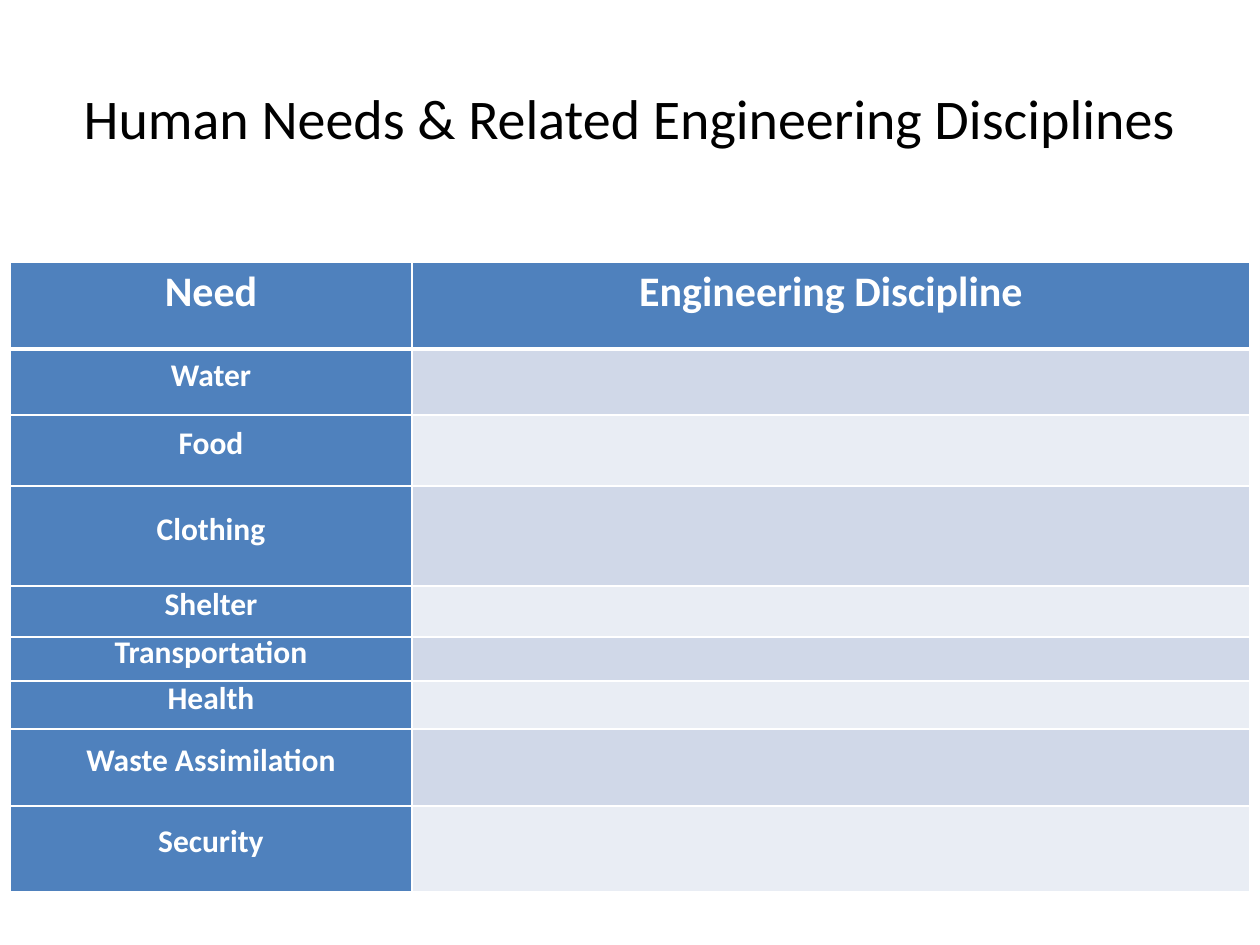
"""Build a slide with a table of human needs and engineering disciplines."""
import pptx
import pptx.dml.color
import pptx.enum.text
import pptx.oxml
import pptx.oxml.ns
import pptx.util

TITLE = "Human Needs & Related Engineering Disciplines"
HEADINGS = ("Need", "Engineering Discipline")
NEEDS = [
    ("Water", 66),
    ("Food", 71),
    ("Clothing", 100),
    ("Shelter", 51),
    ("Transportation", 44),
    ("Health", 48),
    ("Waste Assimilation", 77),
    ("Security", 86),
]
HEADING_HEIGHT = 87
COLUMN_WIDTHS = (402, 838)
TABLE_LEFT, TABLE_TOP = 10, 262
TITLE_BOX = (32, 38, 1196, 158)
COLORS = {
    "text": "000000",
    "white": "FFFFFF",
    "blue": "4F81BD",
    "odd": "D0D8E8",
    "even": "E9EDF4",
}
FONT = "Calibri"


def px(length):
    return pptx.util.Emu(round(length * 914400 / 126))


def color(name):
    return pptx.dml.color.RGBColor.from_string(COLORS[name])


def write(paragraph, text, size, color_name, bold=False):
    paragraph.text = text
    paragraph.alignment = pptx.enum.text.PP_ALIGN.CENTER
    paragraph.font.name = FONT
    paragraph.font.size = pptx.util.Pt(size)
    paragraph.font.bold = bold
    paragraph.font.color.rgb = color(color_name)


def add_borders(cell, bottom):
    properties = cell._tc.get_or_add_tcPr()
    for index, (side, width) in enumerate((("L", 1), ("R", 1), ("T", 1), ("B", bottom))):
        properties.insert(index, pptx.oxml.parse_xml(
            f'<a:ln{side} {pptx.oxml.ns.nsdecls("a")} w="{width * 12700}"><a:solidFill>'
            f'<a:srgbClr val="{COLORS["white"]}"/></a:solidFill></a:ln{side}>'))


def fill_cell(cell, text, size, fill, bottom=1):
    cell.margin_left = cell.margin_right = cell.margin_top = cell.margin_bottom = 0
    cell.vertical_anchor = pptx.enum.text.MSO_ANCHOR.MIDDLE
    cell.fill.solid()
    cell.fill.fore_color.rgb = color(fill)
    paragraph = cell.text_frame.paragraphs[0]
    write(paragraph, text, size, "white", True)
    paragraph.line_spacing = pptx.util.Pt(14.4)
    paragraph.space_before = paragraph.space_after = pptx.util.Pt(4.2)
    add_borders(cell, bottom)


deck = pptx.Presentation()
deck.slide_width, deck.slide_height = px(1260), px(945)
slide = deck.slides.add_slide(deck.slide_layouts[6])

heights = [HEADING_HEIGHT] + [height for _, height in NEEDS]
needs_table = slide.shapes.add_table(
    len(heights), len(COLUMN_WIDTHS), px(TABLE_LEFT), px(TABLE_TOP),
    px(sum(COLUMN_WIDTHS)), px(sum(heights))).table
for column, width in zip(needs_table.columns, COLUMN_WIDTHS):
    column.width = px(width)
for row, height in zip(needs_table.rows, heights):
    row.height = px(height)

for column, heading in enumerate(HEADINGS):
    fill_cell(needs_table.cell(0, column), heading, 24, "blue", 3)
for row, (need, _) in enumerate(NEEDS, 1):
    fill_cell(needs_table.cell(row, 0), need, 18, "blue")
    fill_cell(needs_table.cell(row, 1), "", 18, "odd" if row % 2 else "even")

title = slide.shapes.add_textbox(*map(px, TITLE_BOX)).text_frame
title.word_wrap = True
title.vertical_anchor = pptx.enum.text.MSO_ANCHOR.MIDDLE
write(title.paragraphs[0], TITLE, 32, "text")

deck.save("out.pptx")
